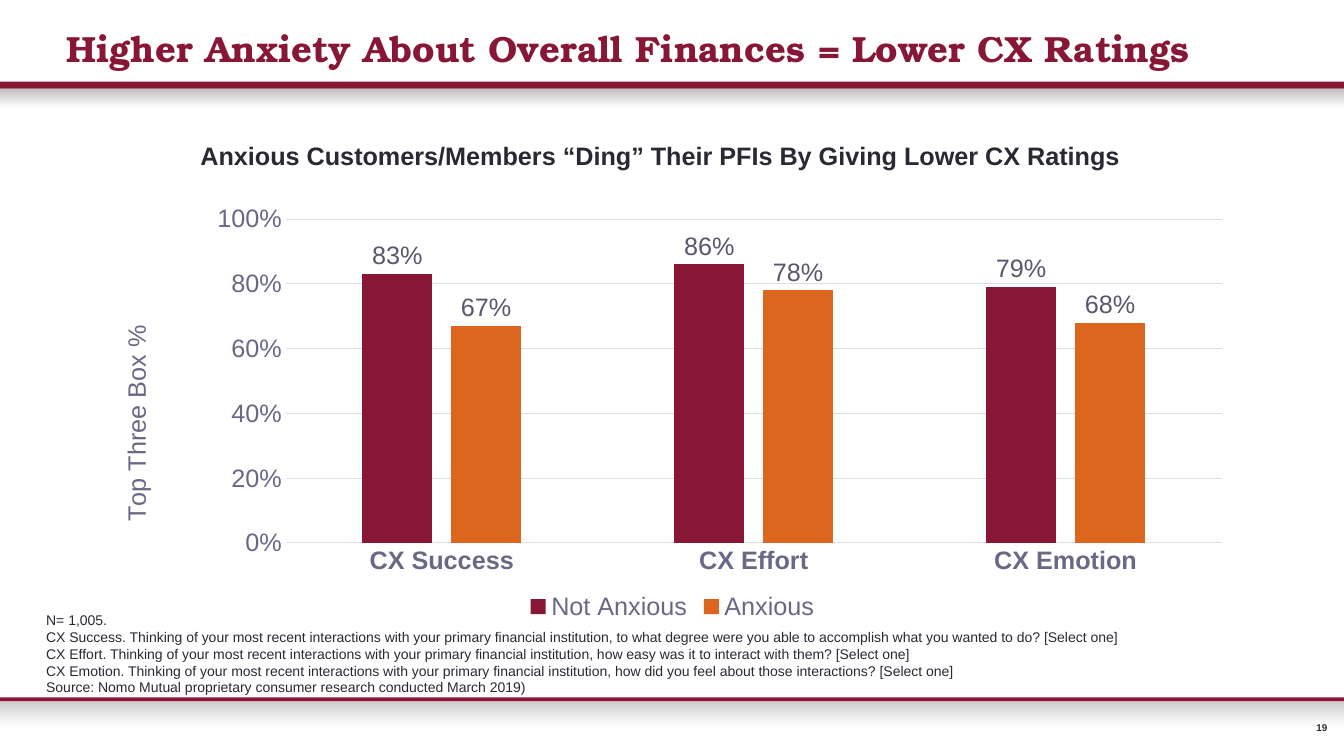
from dataclasses import dataclass

from lxml import etree
from pptx import Presentation
from pptx.chart.data import CategoryChartData
from pptx.dml.color import RGBColor
from pptx.enum.chart import (XL_CHART_TYPE, XL_LABEL_POSITION,
                             XL_LEGEND_POSITION, XL_TICK_MARK)
from pptx.enum.shapes import MSO_SHAPE
from pptx.enum.text import MSO_ANCHOR, PP_ALIGN
from pptx.oxml import parse_xml
from pptx.oxml.ns import nsdecls, qn
from pptx.util import Pt

CLUSTERED = XL_CHART_TYPE.COLUMN_CLUSTERED
OUTSIDE_END = XL_LABEL_POSITION.OUTSIDE_END
LEGEND_BOTTOM = XL_LEGEND_POSITION.BOTTOM
NO_TICK = XL_TICK_MARK.NONE
RECTANGLE = MSO_SHAPE.RECTANGLE
TOP, MIDDLE = MSO_ANCHOR.TOP, MSO_ANCHOR.MIDDLE
LEFT, RIGHT = PP_ALIGN.LEFT, PP_ALIGN.RIGHT


@dataclass(frozen=True)
class Theme:
    maroon: str = "881635"
    orange: str = "DC661D"
    ink: str = "292934"
    axis: str = "696986"
    label: str = "57576E"
    grid: str = "DCDCE3"
    header_shade: str = "C0C0C0"
    footer_shade: str = "CFCFCF"
    white: str = "FFFFFF"
    heading_font: str = "TeX Gyre Bonum"
    body_font: str = "Arial"
    title_size: float = 26
    chart_size: float = 18
    note_size: float = 10
    number_size: float = 7


THEME = Theme()
WIDTH, HEIGHT = 960, 540

TITLE = "Higher Anxiety About Overall Finances = Lower CX Ratings"
SUBTITLE = "Anxious Customers/Members “Ding” Their PFIs By Giving Lower CX Ratings"
CATEGORIES = ["CX Success", "CX Effort", "CX Emotion"]
SERIES = [("Not Anxious", (0.83, 0.86, 0.79), THEME.maroon),
          ("Anxious", (0.67, 0.78, 0.68), THEME.orange)]
RECENT = "Thinking of your most recent interactions with your primary financial institution,"
NOTES = [
    "N= 1,005.",
    f"CX Success. {RECENT} to what degree were you able to accomplish what you wanted to do? [Select one]",
    f"CX Effort. {RECENT} how easy was it to interact with them? [Select one]",
    f"CX Emotion. {RECENT} how did you feel about those interactions? [Select one]",
    "Source: Nomo Mutual proprietary consumer research conducted March 2019)",
]


def color(code):
    return RGBColor.from_string(code)


def style_font(font, size, code, bold=False, name=THEME.body_font):
    font.name = name
    font.size = Pt(size)
    font.bold = bold
    font.color.rgb = color(code)


def place(shape, box):
    shape.left, shape.top, shape.width, shape.height = map(Pt, box)


def write_text(shape, lines, size, code=THEME.ink, bold=False,
               name=THEME.body_font, align=LEFT, anchor=TOP, inset=None):
    frame = shape.text_frame
    frame.word_wrap = True
    frame.vertical_anchor = anchor
    if inset is not None:
        frame.margin_left = frame.margin_right = Pt(inset)
        frame.margin_top = frame.margin_bottom = Pt(inset)
    frame.text = "\n".join(lines)
    for paragraph in frame.paragraphs:
        paragraph.alignment = align
        for run in paragraph.runs:
            style_font(run.font, size, code, bold, name)


def add_text(slide, box, lines, size, **options):
    write_text(slide.shapes.add_textbox(*map(Pt, box)), lines, size, **options)


def add_rule(slide, box, shade, shade_height):
    """Draw a maroon rule with a grey shade fading out below it."""
    left, top, width, height = box
    shadow_box = (left, top + height, width, shade_height)
    for part_box in (shadow_box, box):
        shape = slide.shapes.add_shape(RECTANGLE, *map(Pt, part_box))
        shape.shadow.inherit = False
        shape.line.fill.background()
        if part_box is box:
            shape.fill.solid()
            shape.fill.fore_color.rgb = color(THEME.maroon)
        else:
            shape.fill.gradient()
            shape.fill.gradient_angle = 270
            for stop, code in zip(shape.fill.gradient_stops, (shade, THEME.white)):
                stop.color.rgb = color(code)


def manual_layout(**values):
    """Build a chart layout element; keys are its child names in schema order."""
    children = "".join(f'<c:{key} val="{value}"/>' for key, value in values.items())
    return parse_xml(f'<c:layout {nsdecls("c")}><c:manualLayout>{children}'
                     '</c:manualLayout></c:layout>')


def set_layout(parent, layout, before):
    for existing in parent.findall(qn("c:layout")):
        parent.remove(existing)
    parent.find(qn(before)).addprevious(layout)


def style_axes(chart):
    category, value = chart.category_axis, chart.value_axis
    for axis in (category, value):
        axis.major_tick_mark = axis.minor_tick_mark = NO_TICK
        style_font(axis.tick_labels.font, THEME.chart_size, THEME.axis,
                   bold=axis is category)
    value.minimum_scale, value.maximum_scale, value.major_unit = 0, 1, 0.2
    value.tick_labels.number_format = "0%"
    value.tick_labels.number_format_is_linked = False
    value.format.line.fill.background()
    for line in (category.format.line, value.major_gridlines.format.line):
        line.color.rgb = color(THEME.grid)
        line.width = Pt(0.75)

    title = value.axis_title
    title.text_frame.text = "Top Three Box %"
    style_font(title.text_frame.paragraphs[0].runs[0].font,
               THEME.chart_size, THEME.axis)
    title_body = title.text_frame._txBody.find(qn("a:bodyPr"))
    title_body.set("rot", "-5400000")
    title_body.set("vert", "horz")
    set_layout(title._element, manual_layout(xMode="edge", yMode="edge", x=0.01, y=0.32),
               "c:overlay")


def add_ratings_chart(slide, box):
    data = CategoryChartData(number_format="0%")
    data.categories = CATEGORIES
    for name, values, _ in SERIES:
        data.add_series(name, values)
    chart = slide.shapes.add_chart(CLUSTERED, *map(Pt, box), data).chart
    chart.has_title = False
    style_font(chart.font, THEME.note_size, THEME.ink)
    style_axes(chart)

    chart.has_legend = True
    chart.legend.position = LEGEND_BOTTOM
    chart.legend.include_in_layout = False
    style_font(chart.legend.font, THEME.chart_size, THEME.axis)

    plot = chart.plots[0]
    plot.gap_width, plot.overlap, plot.vary_by_categories = 219, -27, False
    for series, (_, _, code) in zip(plot.series, SERIES):
        series.format.fill.solid()
        series.format.fill.fore_color.rgb = color(code)
        labels = series.data_labels
        labels.show_value = True
        labels.position = OUTSIDE_END
        labels.number_format = "0%"
        labels.number_format_is_linked = False
        style_font(labels.font, THEME.chart_size, THEME.label)
    set_layout(plot._element.getparent(),
               manual_layout(layoutTarget="inner", xMode="edge", yMode="edge",
                             x=0.16, y=0.093, w=0.823, h=0.722), "c:barChart")


def add_header(slide, box):
    left, top, width, height = box
    add_rule(slide, (left, top + height - 5, width, 5), THEME.header_shade, 13.7)
    title = slide.shapes.title
    place(title, (left + 40.3, top + 14.4, width - 52, 39))
    write_text(title, [TITLE], THEME.title_size, code=THEME.maroon, bold=True,
               name=THEME.heading_font, anchor=MIDDLE)


def add_footer(slide, box):
    left, top, width, height = box
    add_rule(slide, (left, top, width, 2.9), THEME.footer_shade, 18)
    add_text(slide, (left + width - 32, top + 17.3, 20, 9), ["19"],
             THEME.number_size, bold=True, align=RIGHT, anchor=MIDDLE, inset=0)


def main():
    presentation = Presentation()
    presentation.slide_width, presentation.slide_height = Pt(WIDTH), Pt(HEIGHT)
    slide = presentation.slides.add_slide(presentation.slide_layouts[5])
    add_header(slide, (0, 0, WIDTH, 63.4))
    add_footer(slide, (0, 498.2, WIDTH, HEIGHT - 498.2))
    add_ratings_chart(slide, (74.2, 126.7, 812.2, 320.4))
    add_text(slide, (25.9, 433.4, 812.2, 80), NOTES, THEME.note_size)
    add_text(slide, (136.1, 96.5, 688.3, 29), [SUBTITLE], THEME.chart_size, bold=True)
    presentation.save("out.pptx")


if __name__ == "__main__":
    main()
